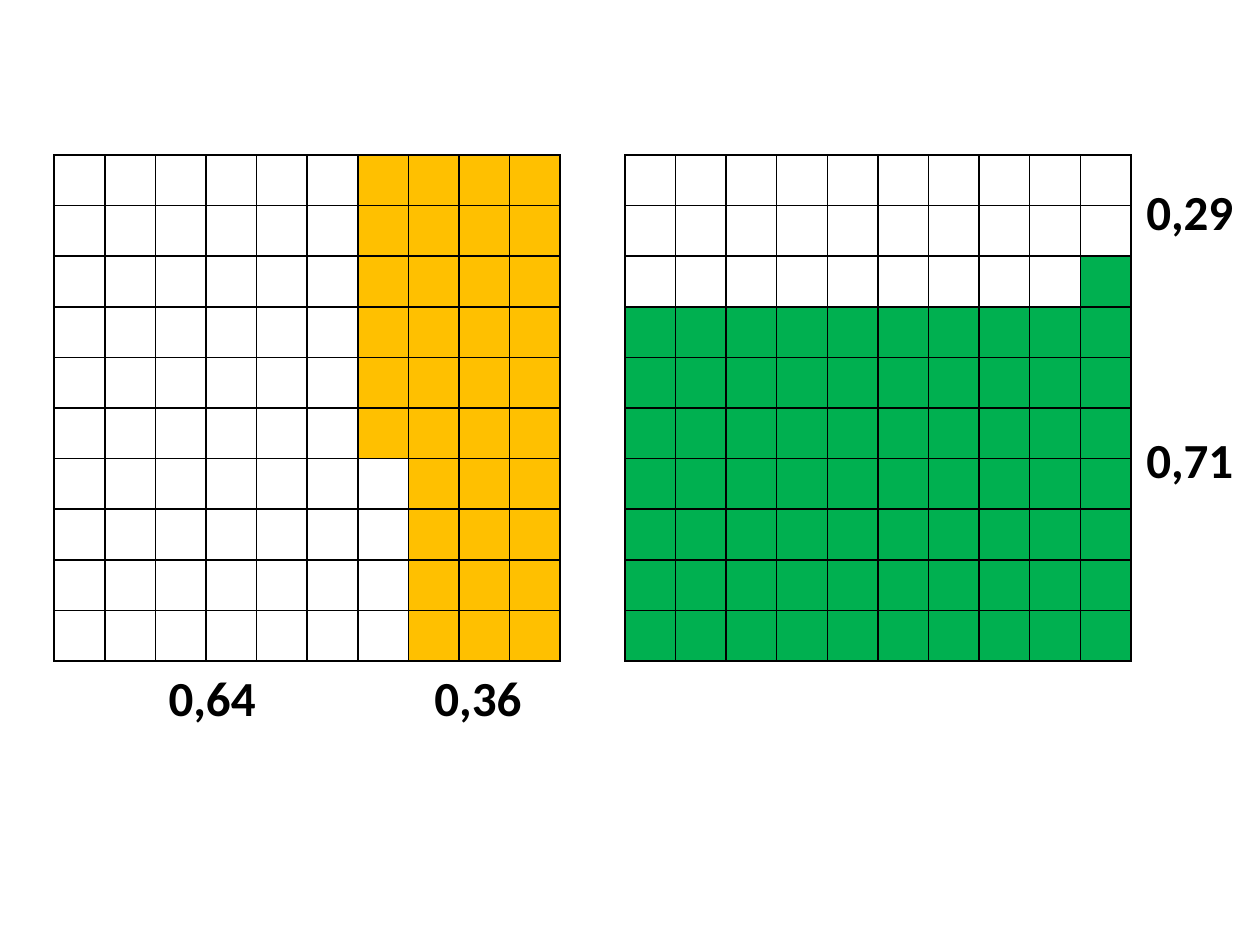
from lxml import etree
from pptx import Presentation
from pptx.dml.color import RGBColor
from pptx.enum import text
from pptx.oxml import ns
from pptx.util import Pt

SIZE = 10
CELL = 28.94
GRID_TOP = 88.56
WHITE, BLACK = "FFFFFF", "000000"

# Hundred grids: left edge, fill colour, coloured cells, direction of filling
GRIDS = [
    (30.96, "FFC000", 36, "columns from right"),
    (357.12, "00B050", 71, "rows from bottom"),
]
# Decimal labels: text, left, top
LABELS = [
    ("0,36", 241.2, 378),
    ("0,71", 648, 241.92),
    ("0,64", 89.28, 378),
    ("0,29", 648, 100.08),
]


def rgb(value):
    return RGBColor.from_string(value)


def add_borders(cell, color, width):
    properties = cell._tc.get_or_add_tcPr()
    for side in ("a:lnL", "a:lnR", "a:lnT", "a:lnB"):
        line = etree.SubElement(properties, ns.qn(side), w=str(Pt(width)))
        fill = etree.SubElement(line, ns.qn("a:solidFill"))
        etree.SubElement(fill, ns.qn("a:srgbClr"), val=color)


def fill_rank(row, column, direction):
    """Return the position of a cell in the order of filling."""
    if direction == "columns from right":
        return (SIZE - 1 - column) * SIZE + row
    return (SIZE - 1 - row) * SIZE + SIZE - 1 - column


def add_grid(page, left, color, count, direction):
    side = Pt(SIZE * CELL)
    table = page.shapes.add_table(SIZE, SIZE, Pt(left), Pt(GRID_TOP), side, side).table
    table.first_row = table.horz_banding = False
    for line in table.columns:
        line.width = Pt(CELL)
    for line in table.rows:
        line.height = Pt(CELL)
    for row in range(SIZE):
        for column in range(SIZE):
            cell = table.cell(row, column)
            cell.margin_left = cell.margin_right = 0
            cell.margin_top = cell.margin_bottom = 0
            add_borders(cell, BLACK, 1)
            colored = fill_rank(row, column, direction) < count
            cell.fill.solid()
            cell.fill.fore_color.rgb = rgb(color if colored else WHITE)


def add_label(page, content, left, top, size=28, color=BLACK, bold=True):
    box = page.shapes.add_textbox(Pt(left), Pt(top), Pt(64.8), Pt(41.04))
    frame = box.text_frame
    frame.word_wrap = False
    frame.auto_size = text.MSO_AUTO_SIZE.SHAPE_TO_FIT_TEXT
    span = frame.paragraphs[0].add_run()
    span.text = content
    span.font.name = "Calibri"
    span.font.size = Pt(size)
    span.font.bold = bold
    span.font.color.rgb = rgb(color)


def main():
    deck = Presentation()
    deck.slide_width, deck.slide_height = Pt(720), Pt(540)
    page = deck.slides.add_slide(deck.slide_layouts[6])
    for grid in GRIDS:
        add_grid(page, *grid)
    for label in LABELS:
        add_label(page, *label)
    deck.save("out.pptx")


if __name__ == "__main__":
    main()
